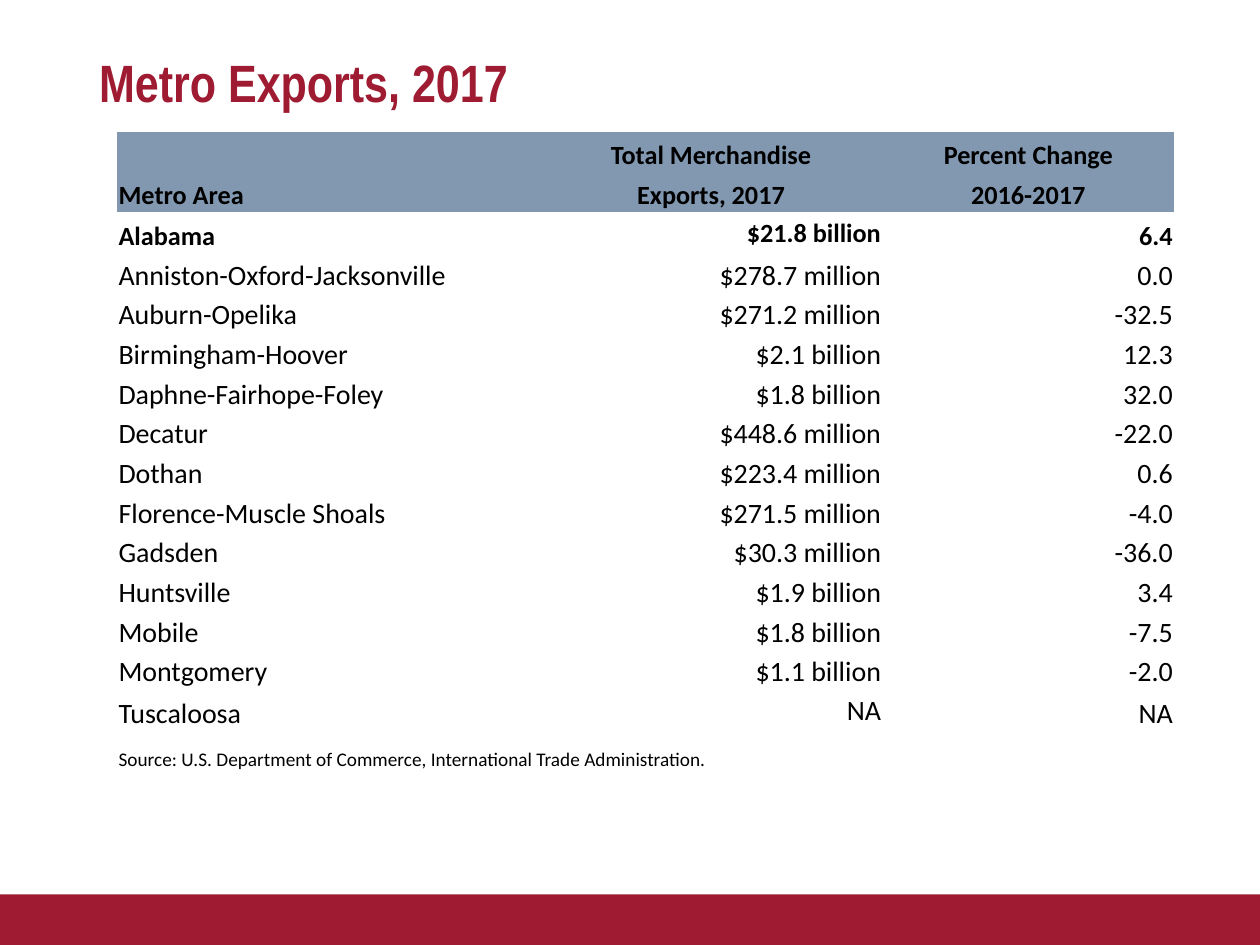
"""Build the Metro Exports, 2017 slide."""
from pptx import Presentation
from pptx.dml.color import RGBColor
from pptx.enum.shapes import MSO_SHAPE
from pptx.enum.text import MSO_ANCHOR as ANCHOR, PP_ALIGN as ALIGN
from pptx.util import Cm, Pt

CRIMSON = RGBColor(0x9E, 0x1B, 0x32)
SLATE = RGBColor(0x82, 0x98, 0xB0)
BLACK = RGBColor(0, 0, 0)
NO_STYLE = "{2D5ABB26-0587-4C30-8999-92F81FD0307C}"

TITLE = "Metro Exports, 2017"
HEADER = [
    ("", "Total Merchandise", "Percent Change"),
    ("Metro Area", "Exports, 2017", "2016-2017"),
]
TOTAL = ("Alabama", "$21.8 billion", "6.4")
METROS = [
    ("Anniston-Oxford-Jacksonville", "$278.7 million", "0.0"),
    ("Auburn-Opelika", "$271.2 million", "-32.5"),
    ("Birmingham-Hoover", "$2.1 billion", "12.3"),
    ("Daphne-Fairhope-Foley", "$1.8 billion", "32.0"),
    ("Decatur", "$448.6 million", "-22.0"),
    ("Dothan", "$223.4 million", "0.6"),
    ("Florence-Muscle Shoals", "$271.5 million", "-4.0"),
    ("Gadsden", "$30.3 million", "-36.0"),
    ("Huntsville", "$1.9 billion", "3.4"),
    ("Mobile", "$1.8 billion", "-7.5"),
    ("Montgomery", "$1.1 billion", "-2.0"),
    ("Tuscaloosa", "NA", "NA"),
]
SOURCE = ("Source: U.S. Department of Commerce, International Trade Administration.", "", "")
ROWS = [*HEADER, TOTAL, *METROS, SOURCE]
COL_WIDTHS = (8.52, 6.91, 5.88)
ROW_HEIGHT, TALL_HEIGHT = 0.8, 0.83
TOTAL_ROW, LAST_METRO, SOURCE_ROW = len(HEADER), len(ROWS) - 2, len(ROWS) - 1
TALL_ROWS = (TOTAL_ROW, LAST_METRO, SOURCE_ROW)


def set_font(p, name, size, color, bold):
    p.font.name, p.font.size, p.font.bold = name, Pt(size), bold
    p.font.color.rgb = color


def add_bar(s):
    bar = s.shapes.add_shape(MSO_SHAPE.RECTANGLE, 0, Cm(18.03), Cm(25.4), Cm(1.02))
    bar.shadow.inherit = False
    bar.fill.solid()
    bar.fill.fore_color.rgb = CRIMSON
    bar.line.fill.background()


def add_title(s):
    tf = s.shapes.add_textbox(Cm(1.75), Cm(1.02), Cm(21.9), Cm(1.65)).text_frame
    tf.word_wrap = True
    p = tf.paragraphs[0]
    p.text, p.line_spacing = TITLE, 0.9
    set_font(p, "Arial Narrow", 30, CRIMSON, True)


def fill_cell(cell, text, row, col):
    is_header = row < TOTAL_ROW
    cell.margin_left = cell.margin_right = cell.margin_top = Cm(0.03)
    cell.margin_bottom = 0
    raised = col == 1 and row in (TOTAL_ROW, LAST_METRO)
    cell.vertical_anchor = ANCHOR.MIDDLE if raised else ANCHOR.BOTTOM
    if is_header:
        cell.fill.solid()
        cell.fill.fore_color.rgb = SLATE
    else:
        cell.fill.background()
    p = cell.text_frame.paragraphs[0]
    p.text = text
    p.alignment = ALIGN.LEFT if col == 0 else ALIGN.CENTER if is_header else ALIGN.RIGHT
    size = 15 if row <= TOTAL_ROW else 11 if row == SOURCE_ROW else 16
    set_font(p, "Calibri", size, BLACK, row <= TOTAL_ROW)


def add_exports(s):
    heights = [TALL_HEIGHT if i in TALL_ROWS else ROW_HEIGHT for i in range(len(ROWS))]
    table = s.shapes.add_table(
        len(ROWS), len(COL_WIDTHS), Cm(2.36), Cm(2.67),
        Cm(sum(COL_WIDTHS)), Cm(sum(heights)),
    ).table
    table.first_row = table.horz_banding = False
    table._tbl.tblPr[0].text = NO_STYLE
    for column, width in zip(table.columns, COL_WIDTHS):
        column.width = Cm(width)
    for i, texts in enumerate(ROWS):
        table.rows[i].height = Cm(heights[i])
        for j, text in enumerate(texts):
            fill_cell(table.cell(i, j), text, i, j)
    table.cell(SOURCE_ROW, 0).merge(table.cell(SOURCE_ROW, len(COL_WIDTHS) - 1))


def main():
    prs = Presentation()
    prs.slide_width, prs.slide_height = Cm(25.4), Cm(19.05)
    s = prs.slides.add_slide(prs.slide_layouts[6])
    add_bar(s)
    add_title(s)
    add_exports(s)
    prs.save("out.pptx")


if __name__ == "__main__":
    main()
